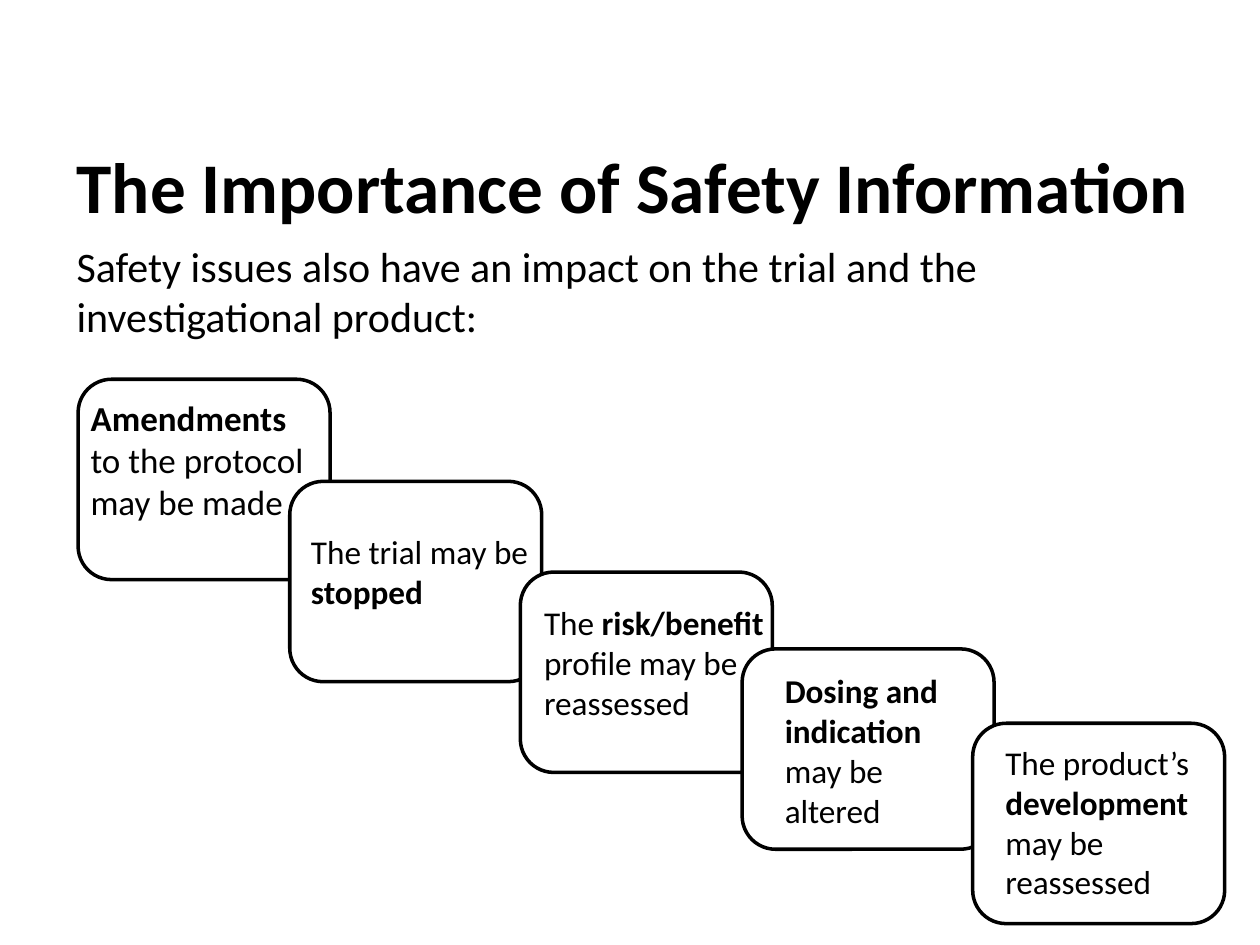
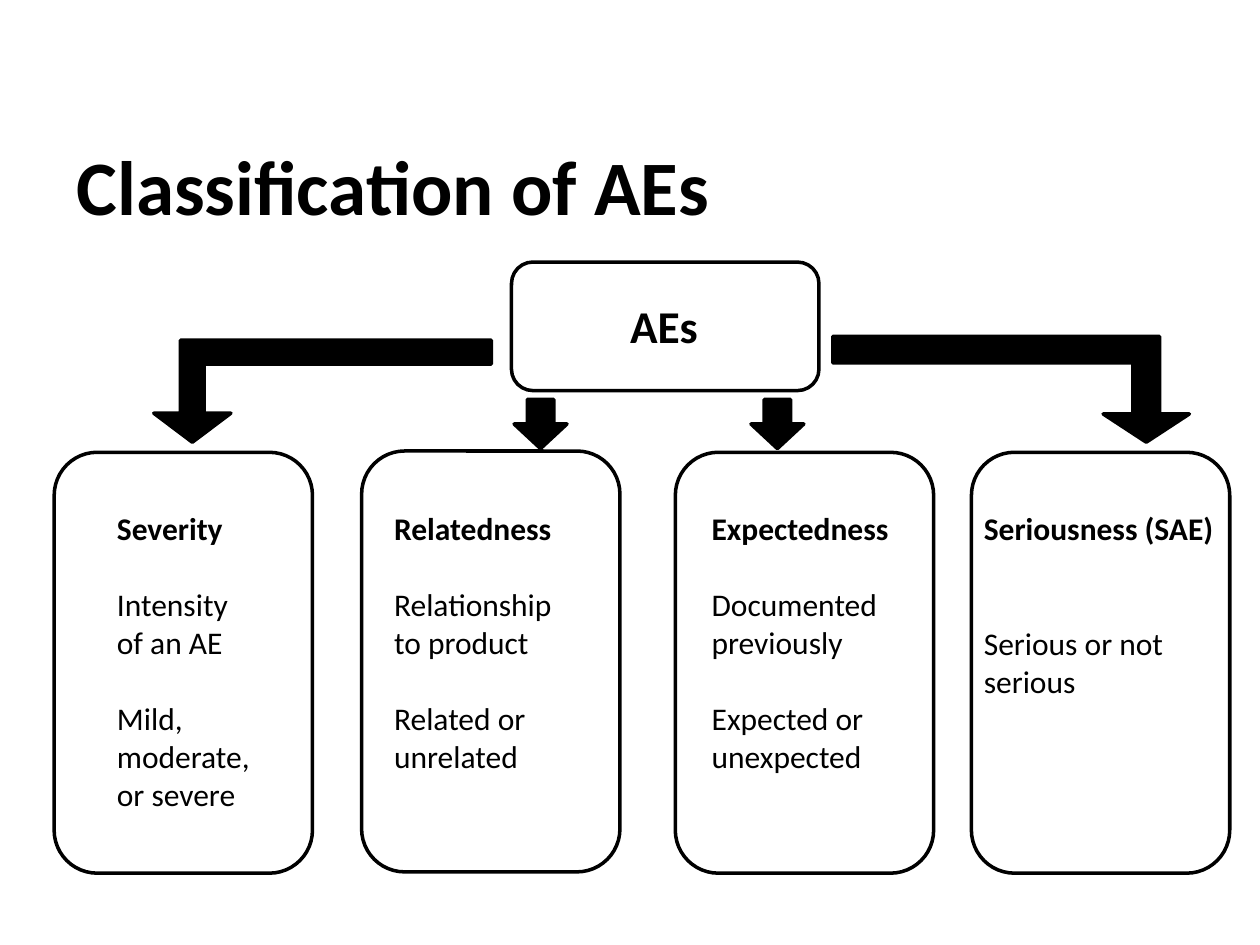
from pptx import Presentation
from pptx.dml.color import RGBColor
from pptx.enum.shapes import MSO_SHAPE
from pptx.enum.text import MSO_ANCHOR, MSO_AUTO_SIZE, PP_ALIGN
from pptx.util import Inches, Pt

BLACK = RGBColor(0x00, 0x00, 0x00)
WHITE = RGBColor(0xFF, 0xFF, 0xFF)
FONT = "Calibri"
BLANK_LAYOUT = 6
ROUNDED = MSO_SHAPE.ROUNDED_RECTANGLE
DOWN_ARROW = MSO_SHAPE.DOWN_ARROW
BENT_ARROW = MSO_SHAPE.BENT_UP_ARROW
MIDDLE = MSO_ANCHOR.MIDDLE
GROW = MSO_AUTO_SIZE.SHAPE_TO_FIT_TEXT
CENTER = PP_ALIGN.CENTER

# Impact steps: box left and top, text frame, size, (text, bold) runs
STEP_SIZE = (2, 1.59)
IMPACT_STEPS = [
    (0.62, 3.01, (0.62, 3.1, 1.95, 1.11), 20,
     [("Amendments ", True), ("to the protocol may be made", False)]),
    (2.3, 3.82, (2.37, 4.17, 2.56, 0.74), 19,
     [("The trial may be ", False), ("stopped", True)]),
    (4.13, 4.54, (4.22, 4.73, 2.56, 1.06), 19,
     [("The ", False), ("risk/benefit", True),
      (" profile may be reassessed", False)]),
    (5.89, 5.15, (6.13, 5.27, 1.75, 1.38), 19,
     [("Dosing and indication ", True), ("may be altered", False)]),
    (7.72, 5.74, (7.88, 5.84, 1.75, 1.38), 19,
     [("The product’s ", False), ("development", True),
      (" may be reassessed", False)]),
]

# Classes of AEs: box left and top, text left, width and height,
# heading, details, blank lines between paragraphs
CLASS_SIZE = (2.05, 3.34)
CLASS_TEXT_TOP = 3.99
CLASS_FONT_SIZE = 18
LINE_PITCH = 22
AE_CLASSES = [
    (0.43, 3.59, 0.83, 1.26, 2.52, "Severity",
     ["Intensity of an AE", "Mild, moderate, or severe"], 1),
    (2.87, 3.58, 3.03, 1.67, 2.22, "Relatedness",
     ["Relationship to product", "Related or unrelated"], 1),
    (5.36, 3.59, 5.55, 1.67, 2.22, "Expectedness",
     ["Documented previously", "Expected or unexpected"], 1),
    (7.71, 3.59, 7.71, 2.05, 1.62, "Seriousness (SAE)",
     ["Serious or not serious"], 2),
]


def add_outlined(slide, kind, frame, fill=None):
    """Preset shape with the shared black outline."""
    shape = slide.shapes.add_shape(kind, *map(Inches, frame))
    shape.shadow.inherit = False
    if fill is None:
        shape.fill.background()
    else:
        shape.fill.solid()
        shape.fill.fore_color.rgb = fill
    shape.line.color.rgb = BLACK
    shape.line.width = Pt(2)
    return shape


def add_arrow(slide, kind, frame, adjustments=()):
    arrow = add_outlined(slide, kind, frame, BLACK)
    for index, value in enumerate(adjustments):
        arrow.adjustments[index] = value
    return arrow


def add_text(slide, frame, paragraphs, size, grow=True, gap=0):
    """Text box; each paragraph is a list of (text, bold) runs."""
    text_frame = slide.shapes.add_textbox(*map(Inches, frame)).text_frame
    text_frame.word_wrap = True
    if grow:
        text_frame.auto_size = GROW
    for index, runs in enumerate(paragraphs):
        paragraph = (text_frame.add_paragraph() if index
                     else text_frame.paragraphs[0])
        paragraph.font.name = FONT
        paragraph.font.size = Pt(size)
        paragraph.font.color.rgb = BLACK
        if index and gap:
            paragraph.space_before = Pt(gap)
        for words, bold in runs:
            run = paragraph.add_run()
            run.text = words
            run.font.bold = bold
    return text_frame


def add_titled_slide(prs, title, size):
    slide = prs.slides.add_slide(prs.slide_layouts[BLANK_LAYOUT])
    heading = add_text(slide, (0.51, 0.84, 9.21, 1.25), [[(title, True)]],
                       size, grow=False)
    heading.vertical_anchor = MIDDLE
    return slide


def build_importance(prs):
    slide = add_titled_slide(prs, "The Importance of Safety Information", 40.7)
    intro = ("Safety issues also have an impact on the trial "
             "and the investigational product:")
    add_text(slide, (0.51, 1.86, 9, 4.95), [[(intro, False)]], 24, grow=False)

    # Overlapping staircase first, then its wording on top
    for left, top, *_ in IMPACT_STEPS:
        add_outlined(slide, ROUNDED, (left, top, *STEP_SIZE), WHITE)
    for _, _, frame, size, runs in IMPACT_STEPS:
        add_text(slide, frame, [runs], size)


def build_classification(prs):
    slide = add_titled_slide(prs, "Classification of AEs", 44)

    # Root of the tree
    add_outlined(slide, ROUNDED, (4.06, 2.08, 2.44, 1.02))
    root = add_text(slide, (4.7, 2.32, 1.14, 0.54), [[("AEs", True)]], 26)
    root.paragraphs[0].alignment = CENTER

    # Four classes
    for left, top, text_left, width, height, name, details, blanks in AE_CLASSES:
        add_outlined(slide, ROUNDED, (left, top, *CLASS_SIZE))
        paragraphs = [[(name, True)]] + [[(item, False)] for item in details]
        add_text(slide, (text_left, CLASS_TEXT_TOP, width, height), paragraphs,
                 CLASS_FONT_SIZE, gap=blanks * LINE_PITCH)

    # Arrows from the root to the classes
    for left in (4.08, 5.96):
        add_arrow(slide, DOWN_ARROW, (left, 3.17, 0.42, 0.39))
    to_severity = add_arrow(slide, BENT_ARROW, (1.22, 2.7, 2.68, 0.81),
                            (0.233, 0.378, 0.285))
    to_severity.rotation = 180
    to_seriousness = add_arrow(slide, BENT_ARROW, (6.61, 2.67, 2.83, 0.84),
                               (0.25, 0.407, 0.267))
    to_seriousness.element.spPr.xfrm.set("flipV", "1")


def main():
    prs = Presentation()
    prs.slide_width = Inches(10)
    prs.slide_height = Inches(7.5)
    build_importance(prs)
    build_classification(prs)
    prs.save("out.pptx")


if __name__ == "__main__":
    main()
